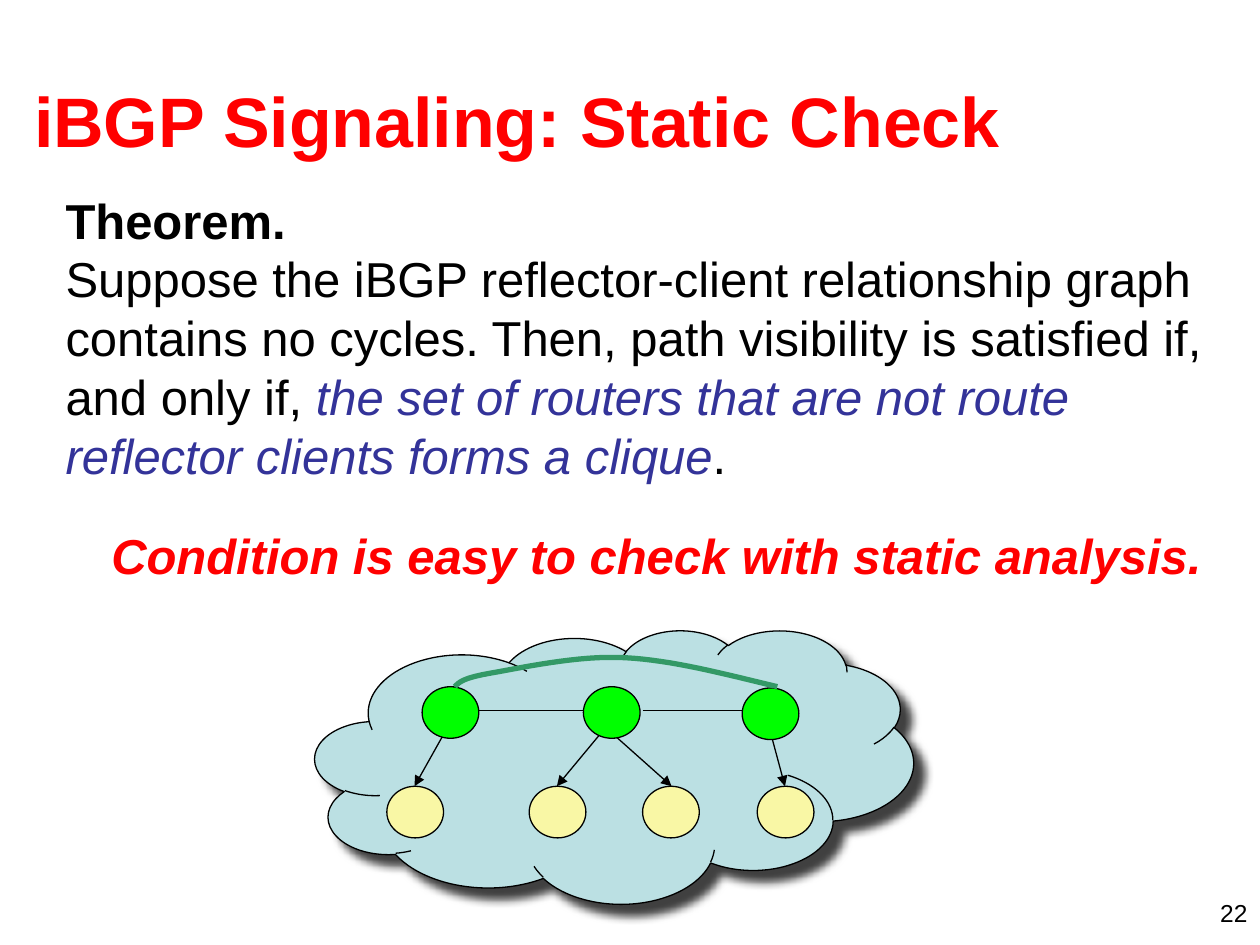
from lxml import etree
from pptx import Presentation
from pptx.dml.color import RGBColor
from pptx.enum.shapes import MSO_CONNECTOR, MSO_SHAPE
from pptx.enum.text import MSO_ANCHOR, MSO_AUTO_SIZE, PP_ALIGN
from pptx.oxml import parse_xml
from pptx.oxml.ns import qn
from pptx.util import Inches, Pt

CLOUD, ELLIPSE = MSO_SHAPE.CLOUD, MSO_SHAPE.OVAL
STRAIGHT = MSO_CONNECTOR.STRAIGHT
MIDDLE, TOP = MSO_ANCHOR.MIDDLE, MSO_ANCHOR.TOP
LEFT, CENTER, RIGHT = PP_ALIGN.LEFT, PP_ALIGN.CENTER, PP_ALIGN.RIGHT
NO_FIT = MSO_AUTO_SIZE.NONE

FONT = "Arial"
BLACK, RED, BLUE = "000000", "FF0000", "333399"
CLOUD_BLUE, REFLECTOR_GREEN, CLIENT_YELLOW = "BBE0E3", "00FF00", "F9F7A5"
SESSION_GREEN = "339966"
NODE_WIDTH, NODE_HEIGHT = 0.45, 0.41

REFLECTORS = [(3.35, 5.45), (4.63, 5.45), (5.89, 5.46)]
CLIENTS = [(left, 6.24) for left in (3.07, 4.2, 5.1, 6.01)]
PEERINGS = [((3.74, 5.64), (4.65, 5.64)), ((5.1, 5.64), (5.89, 5.64))]
CLIENT_LINKS = [((3.52, 5.83), (3.29, 6.24)), ((4.76, 5.83), (4.42, 6.24)),
                ((4.87, 5.83), (5.33, 6.24)), ((6.12, 5.83), (6.23, 6.24))]
# Start point, then three points for each Bezier piece
SESSION_CURVE = [(3.61, 5.45), (3.65, 5.41), (3.68, 5.38), (3.91, 5.34),
                 (4.14, 5.3), (4.59, 5.2), (4.96, 5.22),
                 (5.34, 5.24), (5.75, 5.35), (6.17, 5.45)]

SHADOW = ('<a:effectLst xmlns:a="http://schemas.openxmlformats.org/drawingml/2006/main">'
          '<a:outerShdw blurRad="63500" dist="107950" dir="2700000" algn="ctr" '
          'rotWithShape="0"><a:srgbClr val="000000"><a:alpha val="75000"/>'
          '</a:srgbClr></a:outerShdw></a:effectLst>')


def color(value):
    return RGBColor.from_string(value)


def place(box, left, top, width, height):
    box.left, box.top = Inches(left), Inches(top)
    box.width, box.height = Inches(width), Inches(height)


def set_frame(box, anchor):
    frame = box.text_frame
    frame.word_wrap, frame.auto_size = True, NO_FIT
    frame.vertical_anchor = anchor
    return frame


def set_font(font, size, fill=BLACK, bold=False, italic=False):
    font.name, font.size = FONT, Pt(size)
    font.bold, font.italic = bold, italic
    font.color.rgb = color(fill)


def write_para(para, text, size, fill=BLACK, align=LEFT, bold=False, italic=False):
    para.text, para.alignment = text, align
    set_font(para.font, size, fill, bold, italic)


def plain_body(para):
    """Removes bullet and indent and sets an even line pitch."""
    props = para._p.get_or_add_pPr()
    props.set("marL", "0")
    props.set("indent", "0")
    para.line_spacing, para.space_before = Pt(33.6), Pt(0)
    bullet = etree.Element(qn("a:buNone"))
    props.find(qn("a:spcBef")).addnext(bullet)


def add_shape(page, kind, left, top, width, height, fill):
    shape = page.shapes.add_shape(kind, Inches(left), Inches(top),
                                  Inches(width), Inches(height))
    shape.shadow.inherit = False
    shape.fill.solid()
    shape.fill.fore_color.rgb = color(fill)
    shape.line.color.rgb, shape.line.width = color(BLACK), Pt(0.75)
    return shape


def add_cloud(page):
    props = add_shape(page, CLOUD, 2.5, 5, 4.75, 2.17, CLOUD_BLUE)._element.spPr
    props.replace(props.find(qn("a:effectLst")), parse_xml(SHADOW))


def add_line(page, start, end, arrow=False):
    points = [Inches(value) for value in (*start, *end)]
    line = page.shapes.add_connector(STRAIGHT, *points)
    line.line.color.rgb, line.line.width = color(BLACK), Pt(0.75)
    if arrow:
        etree.SubElement(line.line._get_or_add_ln(), qn("a:tailEnd"), type="triangle")
    etree.SubElement(line._element.spPr, qn("a:effectLst"))


def bezier(points, t):
    weights = ((1 - t) ** 3, 3 * t * (1 - t) ** 2, 3 * t * t * (1 - t), t ** 3)
    return tuple(Inches(sum(weight * point[axis] for weight, point in zip(weights, points)))
                 for axis in (0, 1))


def add_curve(page, points, steps=16):
    traced = [bezier(points[first:first + 4], step / steps)
              for first in range(0, len(points) - 1, 3)
              for step in range(1, steps + 1)]
    builder = page.shapes.build_freeform(*(Inches(value) for value in points[0]))
    builder.add_line_segments(traced, close=False)
    curve = builder.convert_to_shape()
    curve.shadow.inherit = False
    curve.fill.background()
    curve.line.color.rgb, curve.line.width = color(SESSION_GREEN), Pt(3)


def fill_theorem(body):
    place(body, 0.42, 1.46, 9.58, 3.24)
    frame = set_frame(body, TOP)
    heading, statement, remark = (frame.paragraphs[0], frame.add_paragraph(),
                                  frame.add_paragraph())
    write_para(heading, "Theorem.", 28, bold=True)
    write_para(statement, "Suppose the iBGP reflector-client relationship graph contains "
               "no cycles. Then, path visibility is satisfied if, and only if, ", 28)
    span = statement.add_run()
    span.text = "the set of routers that are not route reflector clients forms a clique"
    set_font(span.font, 28, BLUE, italic=True)
    statement.add_run().text = "."
    write_para(remark, "Condition is easy to check with static analysis.", 28, RED,
               CENTER, bold=True, italic=True)
    for para in frame.paragraphs:
        plain_body(para)
    remark.space_before = Pt(23.5)


def main():
    deck = Presentation()
    deck.slide_width, deck.slide_height = Inches(10), Inches(7.5)
    page = deck.slides.add_slide(deck.slide_layouts[1])

    # Title and theorem
    title = page.shapes.title
    place(title, 0.17, 0.32, 9.58, 1.25)
    write_para(set_frame(title, MIDDLE).paragraphs[0],
               "iBGP Signaling: Static Check", 40, RED, bold=True)
    fill_theorem(page.placeholders[1])

    # Network: cloud, links, routers
    add_cloud(page)
    for start, end in PEERINGS:
        add_line(page, start, end)
    for start, end in CLIENT_LINKS:
        add_line(page, start, end, arrow=True)
    for nodes, fill in ((REFLECTORS, REFLECTOR_GREEN), (CLIENTS, CLIENT_YELLOW)):
        for left, top in nodes:
            add_shape(page, ELLIPSE, left, top, NODE_WIDTH, NODE_HEIGHT, fill)
    add_curve(page, SESSION_CURVE)

    # Page number
    number = page.shapes.add_textbox(Inches(7.67), Inches(7.08), Inches(2.33), Inches(0.25))
    write_para(set_frame(number, TOP).paragraphs[0], "22", 14, align=RIGHT)

    deck.save("out.pptx")


if __name__ == "__main__":
    main()
